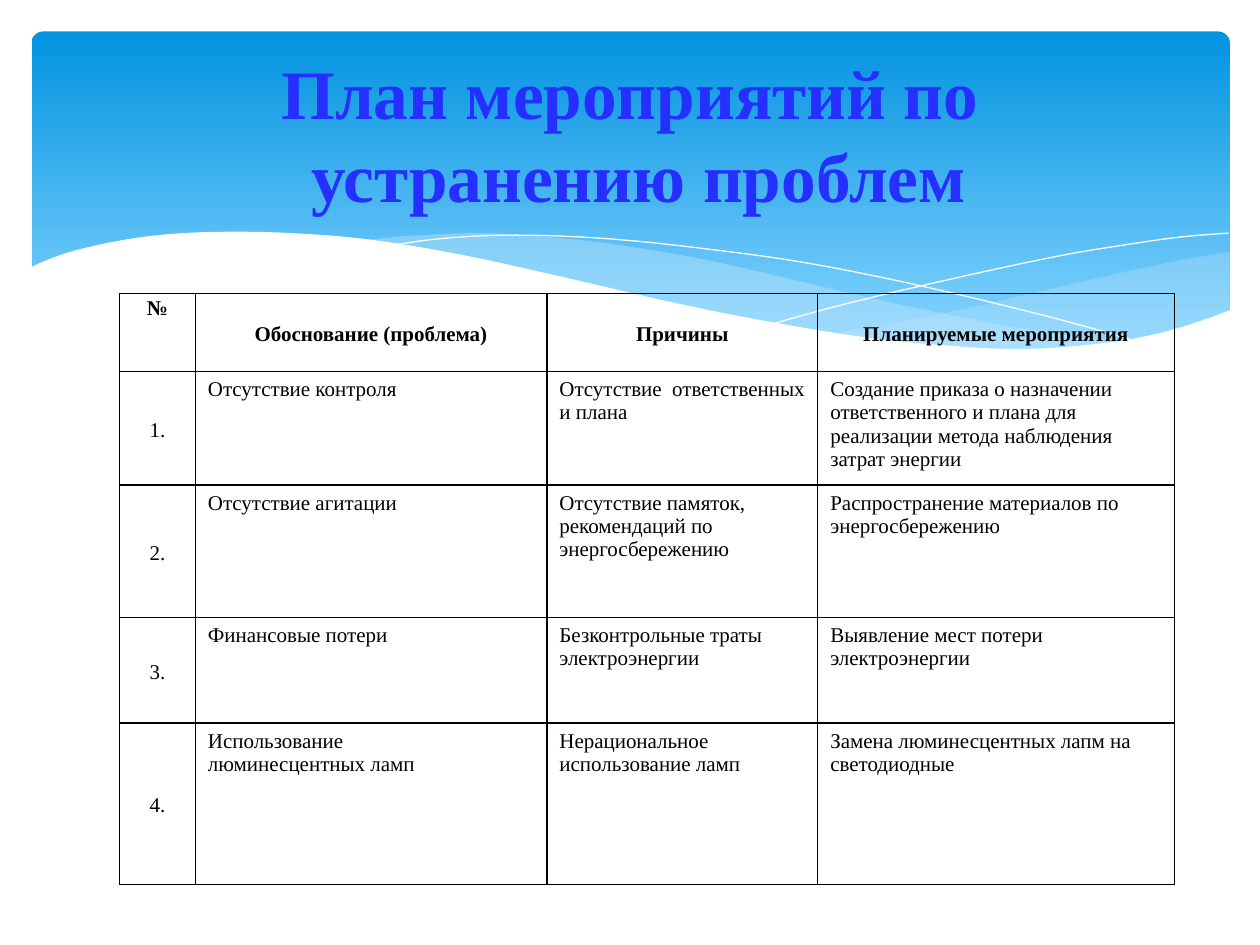
from lxml import etree
from pptx import Presentation
from pptx.dml.color import RGBColor
from pptx.enum import shapes, text
from pptx.oxml import ns
from pptx.util import Inches, Pt

BLACK = RGBColor(0x00, 0x00, 0x00)
WHITE = RGBColor(0xFF, 0xFF, 0xFF)
SKY_TOP = RGBColor(0x02, 0x93, 0xE0)
SKY_BOTTOM = RGBColor(0x83, 0xD3, 0xFE)
PALE_WAVE = RGBColor(0xC6, 0xE7, 0xFC)
TITLE_BLUE = RGBColor(0x25, 0x2F, 0xFF)
FONT = "Times New Roman"


def smooth(knots, steps=6):
    """Return points of a Catmull-Rom curve through the knots, in EMU."""
    padded = [knots[0], *knots, knots[-1]]
    points = [knots[0]]
    for a, b, c, d in zip(padded, padded[1:], padded[2:], padded[3:]):
        for step in range(1, steps + 1):
            t = step / steps
            points.append(tuple(
                (2 * q + (r - p) * t + (2 * p - 5 * q + 4 * r - s) * t ** 2
                 + (3 * q - p - 3 * r + s) * t ** 3) / 2
                for p, q, r, s in zip(a, b, c, d)))
    return [(Inches(x), Inches(y)) for x, y in points]


def add_run(paragraph, words, size, color, bold):
    run = paragraph.add_run()
    run.text = words
    run.font.name = FONT
    run.font.size = Pt(size)
    run.font.bold = bold
    run.font.color.rgb = color


prs = Presentation()
prs.slide_width, prs.slide_height = Inches(10), Inches(7.5)
slide = prs.slides.add_slide(prs.slide_layouts[6])

# Sky panel
sky = slide.shapes.add_shape(
    shapes.MSO_SHAPE.ROUNDED_RECTANGLE,
    Inches(0.25), Inches(0.25), Inches(9.51), Inches(2.7))
sky.adjustments[0] = 0.034
sky.shadow.inherit = False
sky.line.fill.background()
sky.fill.gradient()
sky.fill.gradient_angle = 270
for stop, position, color in zip(sky.fill.gradient_stops, (0, 0.9), (SKY_TOP, SKY_BOTTOM)):
    stop.position = position
    stop.color.rgb = color

# Waves: edges, fill colour (None for a white hairline), opacity in percent
WAVES = [
    ([[(9.76, 2), (9.35, 2.07), (8.61, 2.23), (7.53, 2.48), (6.61, 2.65)],
      [(6.61, 2.65), (7.05, 2.71), (7.57, 2.76), (8.14, 2.78), (8.72, 2.74),
       (9.21, 2.65), (9.76, 2.47)]], PALE_WAVE, 29),
    ([[(8.93, 2.73), (8.37, 2.65), (7.75, 2.54), (7.06, 2.4), (6.29, 2.22),
       (5.69, 2.08), (5.14, 1.98), (4.65, 1.91), (4.2, 1.87), (3.8, 1.85),
       (3.28, 1.87), (2.86, 1.91)],
      [(2.86, 1.91), (3.42, 1.99), (4.04, 2.11), (4.49, 2.22), (5.3, 2.4),
       (6.01, 2.55), (6.65, 2.66), (7.22, 2.74), (7.73, 2.77), (8.18, 2.78),
       (8.57, 2.77), (8.93, 2.73)]], PALE_WAVE, 40),
    ([[(3.09, 1.95), (3.44, 1.9), (3.87, 1.87), (4.33, 1.87), (4.89, 1.9),
       (5.56, 1.97), (6.36, 2.08), (7.27, 2.26), (8.31, 2.51), (9.07, 2.72)]],
     None, 100),
    ([[(6.13, 2.57), (6.72, 2.41), (7.48, 2.23), (8.36, 2.04), (8.95, 1.94),
       (9.38, 1.88), (9.75, 1.85)]], None, 100),
    ([[(9.77, 2.46), (9.4, 2.59), (8.99, 2.69), (8.5, 2.75), (8.09, 2.77),
       (7.61, 2.75), (6.88, 2.68), (6.03, 2.54), (5.29, 2.39), (4.47, 2.2),
       (3.65, 2.02), (2.92, 1.9), (2.3, 1.85), (1.77, 1.84), (1.32, 1.86),
       (0.95, 1.91), (0.59, 1.99), (0.36, 2.07), (0.23, 2.13)],
      [(0.23, 3.29), (9.77, 3.29)]], WHITE, 100),
]
for edges, color, opacity in WAVES:
    outline = [point for edge in edges for point in smooth(edge)]
    builder = slide.shapes.build_freeform(*outline[0])
    builder.add_line_segments(outline[1:], close=color is not None)
    wave = builder.convert_to_shape()
    wave.shadow.inherit = False
    if color is None:
        wave.fill.background()
        wave.line.color.rgb = WHITE
        wave.line.width = Pt(0)
        continue
    wave.line.fill.background()
    wave.fill.solid()
    wave.fill.fore_color.rgb = color
    if opacity < 100:
        tint = wave.fill._xPr.find(".//" + ns.qn("a:srgbClr"))
        etree.SubElement(tint, ns.qn("a:alpha"), val=str(opacity * 1000))

# Title
title = slide.shapes.add_textbox(Inches(0.5), Inches(0.37), Inches(9), Inches(1.37)).text_frame
title.word_wrap = True
title.vertical_anchor = text.MSO_ANCHOR.MIDDLE
heading = title.paragraphs[0]
heading.alignment = text.PP_ALIGN.CENTER
add_run(heading, "План мероприятий по", 39.6, TITLE_BLUE, True)
heading.add_line_break()
add_run(heading, " устранению проблем", 39.6, TITLE_BLUE, True)

# Action plan
PLAN = [
    ("№", "Обоснование (проблема)", "Причины", "Планируемые мероприятия"),
    ("1.", "Отсутствие контроля", "Отсутствие  ответственных и плана",
     "Создание приказа о назначении ответственного и плана для реализации "
     "метода наблюдения затрат энергии"),
    ("2.", "Отсутствие агитации", "Отсутствие памяток, рекомендаций по энергосбережению",
     "Распространение материалов по энергосбережению"),
    ("3.", "Финансовые потери", "Безконтрольные траты электроэнергии",
     "Выявление мест потери электроэнергии"),
    ("4.", "Использование\nлюминесцентных ламп", "Нерациональное использование ламп",
     "Замена люминесцентных лапм на светодиодные"),
]
COLUMN_WIDTHS = (0.6, 2.79, 2.15, 2.83)
ROW_HEIGHTS = (0.62, 0.86, 1.05, 0.84, 1.28)

plan = slide.shapes.add_table(
    len(PLAN), len(COLUMN_WIDTHS), Inches(0.95), Inches(2.33),
    Inches(sum(COLUMN_WIDTHS)), Inches(sum(ROW_HEIGHTS))).table
plan.first_row = plan.horz_banding = False
for column, width in zip(plan.columns, COLUMN_WIDTHS):
    column.width = Inches(width)
for row, height in zip(plan.rows, ROW_HEIGHTS):
    row.height = Inches(height)

for r, entries in enumerate(PLAN):
    for c, entry in enumerate(entries):
        cell = plan.cell(r, c)
        is_label = r == 0 or c == 0
        if is_label:
            cell.margin_left = cell.margin_right = Inches(0.05)
            cell.margin_top = cell.margin_bottom = 0
        if is_label and (r, c) != (0, 0):
            cell.vertical_anchor = text.MSO_ANCHOR.MIDDLE
        for i, line in enumerate(entry.split("\n")):
            frame = cell.text_frame
            paragraph = frame.add_paragraph() if i else frame.paragraphs[0]
            if is_label:
                paragraph.alignment = text.PP_ALIGN.CENTER
                paragraph.line_spacing = 1.15
            add_run(paragraph, line, 12, BLACK, r == 0)
        properties = cell._tc.get_or_add_tcPr()
        for side in ("lnL", "lnR", "lnT", "lnB"):
            border = etree.SubElement(properties, ns.qn("a:" + side), w=str(Pt(1)))
            ink = etree.SubElement(border, ns.qn("a:solidFill"))
            etree.SubElement(ink, ns.qn("a:srgbClr"), val=str(BLACK))
        cell.fill.background()

prs.save("out.pptx")
